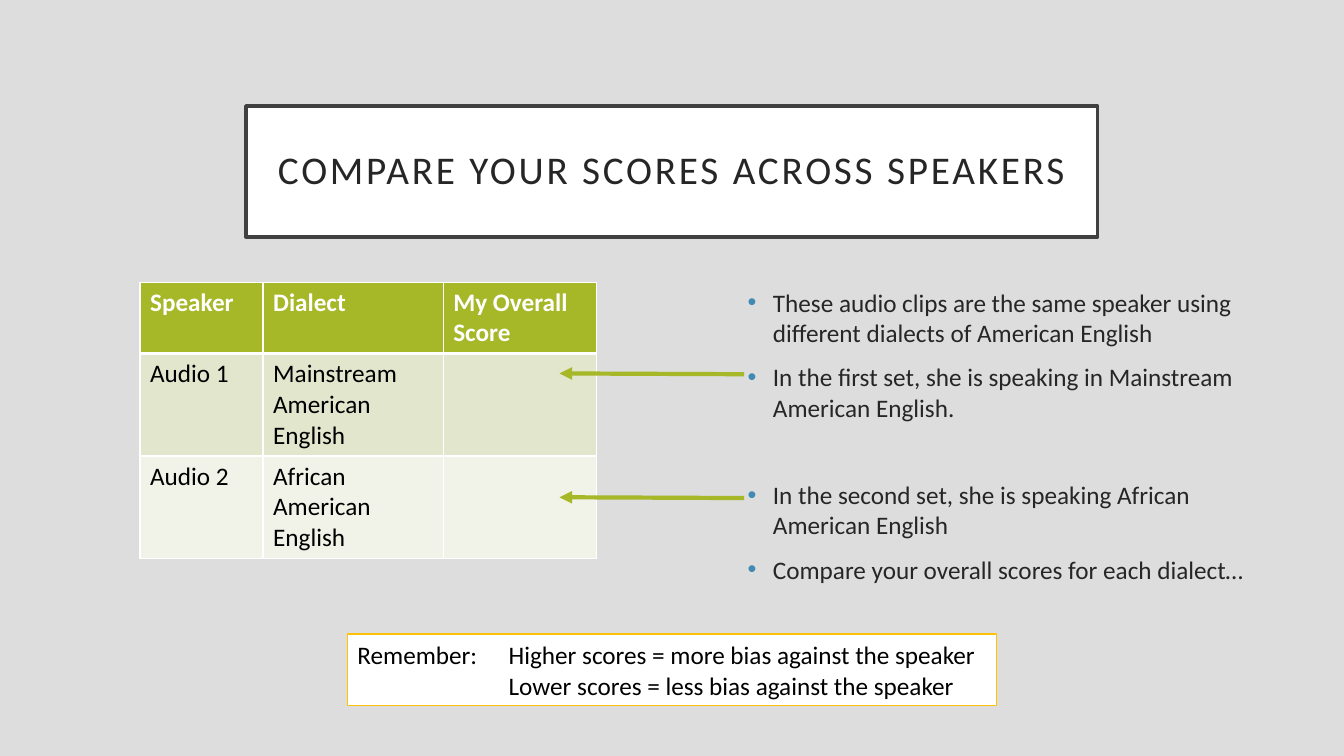
from lxml import etree
from pptx import Presentation
from pptx.dml.color import RGBColor
from pptx.enum.shapes import MSO_CONNECTOR, MSO_SHAPE
from pptx.enum.text import MSO_ANCHOR, PP_ALIGN
from pptx.oxml import parse_xml
from pptx.util import Cm, Pt

RECT, LINE = MSO_SHAPE.RECTANGLE, MSO_CONNECTOR.STRAIGHT
MIDDLE, CENTER, LEFT = MSO_ANCHOR.MIDDLE, PP_ALIGN.CENTER, PP_ALIGN.LEFT
NS = "http://schemas.openxmlformats.org/drawingml/2006/main"

TITLE = "COMPARE YOUR SCORES ACROSS SPEAKERS"
SCORES = [
    ("Speaker", "Dialect", "My Overall Score"),
    ("Audio 1", "Mainstream American English", ""),
    ("Audio 2", "African American English", ""),
]
# Each point with the space before it, in points
POINTS = [
    ("These audio clips are the same speaker using different dialects of American English", 0),
    ("In the first set, she is speaking in Mainstream American English.", 10),
    ("In the second set, she is speaking African American English", 41),
    ("Compare your overall scores for each dialect…", 10),
]
NOTES = [
    "Remember:\tHigher scores = more bias against the speaker",
    "\tLower scores = less bias against the speaker",
]

FONT = "Calibri"
COLORS = {
    "back": "DDDDDD", "white": "FFFFFF", "black": "000000", "ink": "262626",
    "frame": "404040", "green": "A6B727", "gold": "FEC306", "dot": "418AB3",
}
ROW_FILLS = ["A6B727", "E1E6CD", "F1F3E8"]
COLS = [3.1, 4.54, 3.86]
ROWS = [1.8, 2.58, 2.58]
ARROWS = [9.41, 12.53]


def rgb(name):
    return RGBColor.from_string(COLORS[name])


def style(font, color, size=18, bold=False):
    font.name, font.size, font.bold = FONT, Pt(size), bold
    font.color.rgb = rgb(color)


def add(parent, xml):
    """Append a drawing element, written without its namespace."""
    tag, rest = xml[1:].split(" ", 1) if " " in xml else (xml[1:-2], "/>")
    parent.append(parse_xml(f'<{tag} xmlns="{NS}" {rest}'))


def add_box(slide, area, line, width):
    box = slide.shapes.add_shape(RECT, *map(Cm, area))
    box.shadow.inherit = False
    box.fill.solid()
    box.fill.fore_color.rgb = rgb("white")
    box.line.color.rgb = rgb(line)
    box.line.width = Pt(width)
    box.text_frame.word_wrap = True
    return box.text_frame


def fill_lines(frame, lines):
    """Write one paragraph for each line and return them all."""
    frame.text = "\n".join(lines)
    return frame.paragraphs


def add_title(slide):
    frame = add_box(slide, (6.2, 2.67, 21.46, 3.3), "frame", 2.5)
    frame.vertical_anchor = MIDDLE
    frame.margin_left = frame.margin_right = Cm(0.51)
    para = fill_lines(frame, [TITLE])[0]
    para.alignment, para.line_spacing = CENTER, 0.9
    style(para.font, "ink", 28)
    para.runs[0]._r.get_or_add_rPr().set("spc", "200")


def add_points(slide):
    frame = slide.shapes.add_textbox(Cm(18.59), Cm(7.11), Cm(13.34), Cm(8.61)).text_frame
    frame.word_wrap = True
    paras = fill_lines(frame, [text for text, gap in POINTS])
    for para, (text, gap) in zip(paras, POINTS):
        para.space_before = Pt(gap)
        props = para._p.get_or_add_pPr()
        props.set("marL", str(Cm(0.64)))
        props.set("indent", str(-Cm(0.64)))
        add(props, f'<buClr ><srgbClr val="{COLORS["dot"]}"/></buClr>')
        add(props, '<buFont typeface="Arial"/>')
        add(props, '<buChar char="•"/>')
        style(para.font, "ink")


def add_scores(slide):
    area = (3.53, 7.11, sum(COLS), sum(ROWS))
    table = slide.shapes.add_table(len(ROWS), len(COLS), *map(Cm, area)).table
    for col, width in zip(table.columns, COLS):
        col.width = Cm(width)
    for r, row in enumerate(SCORES):
        table.rows[r].height = Cm(ROWS[r])
        for c, text in enumerate(row):
            cell = table.cell(r, c)
            props = cell._tc.get_or_add_tcPr()
            for side in "LRTB":
                heavy = (r, side) in ((0, "B"), (1, "T"))
                add(props, f'<ln{side} w="{Pt(3 if heavy else 1)}"><solidFill>'
                           f'<srgbClr val="{COLORS["white"]}"/></solidFill></ln{side}>')
            cell.fill.solid()
            cell.fill.fore_color.rgb = RGBColor.from_string(ROW_FILLS[r])
            cell.text = text
            style(cell.text_frame.paragraphs[0].font, "black" if r else "white", bold=r == 0)


def add_arrow(slide, y):
    arrow = slide.shapes.add_connector(LINE, Cm(18.75), Cm(y + 0.02), Cm(14.1), Cm(y))
    arrow.line.color.rgb = rgb("green")
    arrow.line.width = Pt(3)
    add(arrow.line._get_or_add_ln(), '<tailEnd type="triangle"/>')
    etree.SubElement(arrow._element.spPr, f"{{{NS}}}effectLst")


def add_notes(slide):
    frame = add_box(slide, (8.76, 15.98, 16.36, 1.8), "gold", 1)
    for para in fill_lines(frame, NOTES):
        para.alignment = LEFT
        add(para._p.get_or_add_pPr(),
            f'<tabLst ><tab pos="{Cm(3.81)}" algn="l"/></tabLst>')
        style(para.font, "black")


def main():
    deck = Presentation()
    deck.slide_width, deck.slide_height = Cm(33.87), Cm(19.05)
    slide = deck.slides.add_slide(deck.slide_layouts[6])
    slide.background.fill.solid()
    slide.background.fill.fore_color.rgb = rgb("back")
    add_title(slide)
    add_points(slide)
    add_scores(slide)
    for y in ARROWS:
        add_arrow(slide, y)
    add_notes(slide)
    deck.save("out.pptx")


if __name__ == "__main__":
    main()
